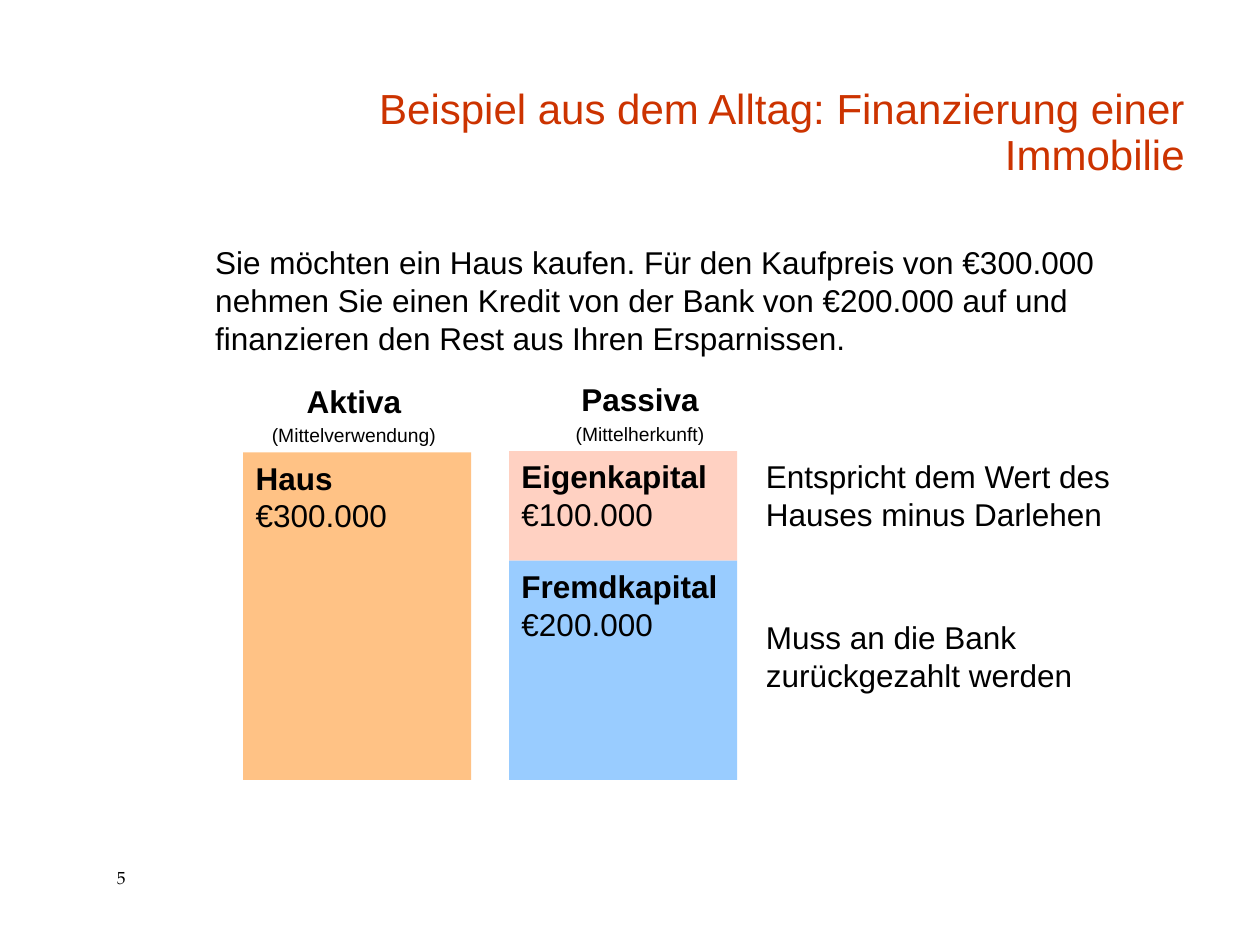
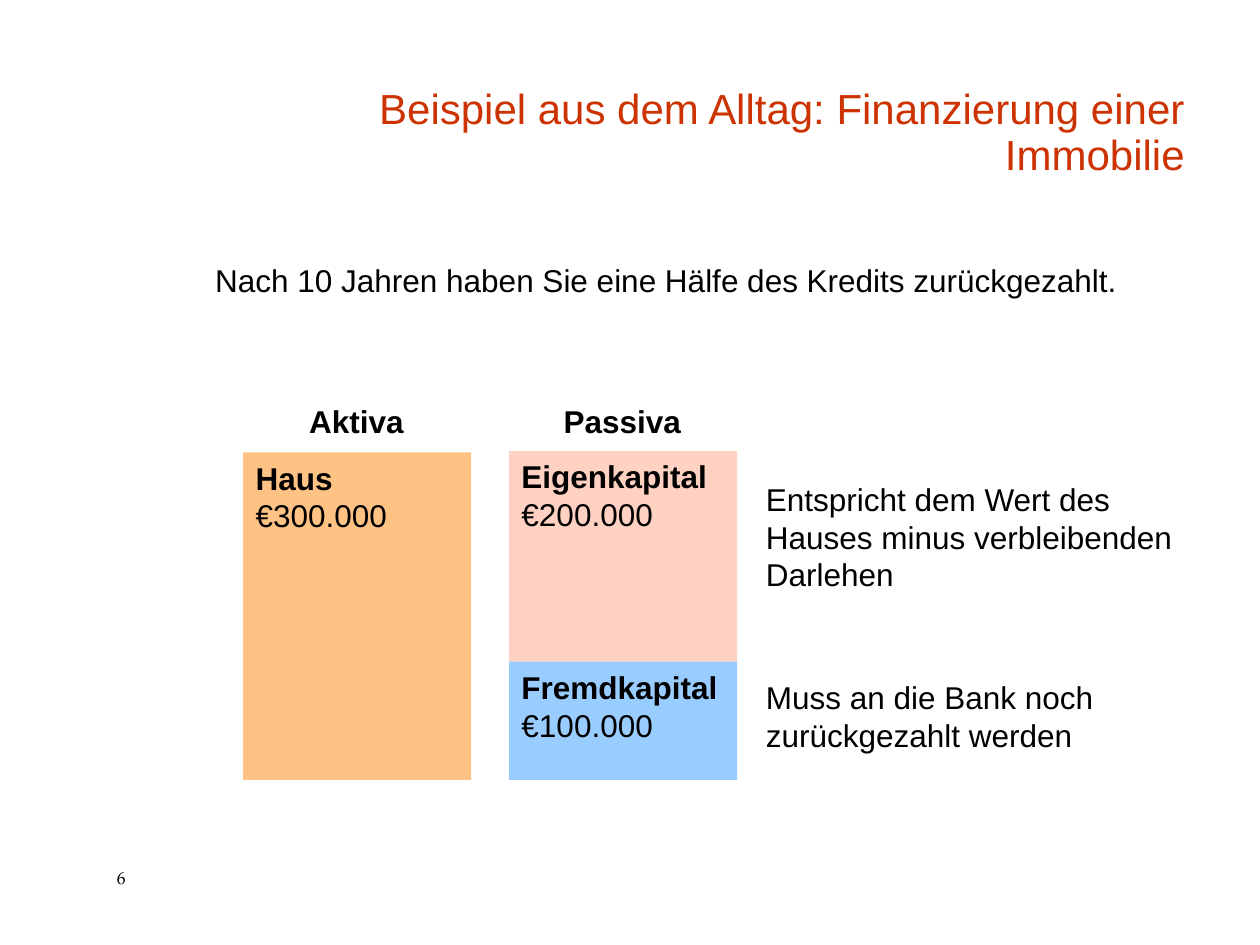
"""Build two slides that show how a house purchase is financed."""
from dataclasses import dataclass
from typing import NamedTuple

import pptx
import pptx.dml.color
import pptx.enum.shapes
import pptx.enum.text
import pptx.presentation
import pptx.shapes.autoshape
import pptx.slide
import pptx.util

RGBColor = pptx.dml.color.RGBColor
Align = pptx.enum.text.PP_ALIGN
Anchor = pptx.enum.text.MSO_ANCHOR

TITLE_RED = RGBColor(0xCC, 0x33, 0x00)
TEXT_BLACK = RGBColor(0x00, 0x00, 0x00)
ASSET_ORANGE = RGBColor(0xFF, 0xC2, 0x85)
EQUITY_PINK = RGBColor(0xFF, 0xD1, 0xC2)
DEBT_BLUE = RGBColor(0x99, 0xCC, 0xFF)

BODY_FONT = "Arial"
NUMBER_FONT = "TeX Gyre Pagella"

SLIDE_WIDTH = pptx.util.Inches(10)
SLIDE_HEIGHT = pptx.util.Inches(7.5)
COLUMNS, ROWS = 100, 75

TITLE = "Beispiel aus dem Alltag: Finanzierung einer Immobilie"
BAR_WIDTH = 18.1
ASSETS_LEFT, LIABILITIES_LEFT, REMARK_LEFT = 19.3, 40.4, 59.8
ASSETS_TOP, LIABILITIES_TOP, BARS_BOTTOM = 35.9, 35.8, 61.9
HEADING_WIDTH = 16


class Area(NamedTuple):
    """Place on the grid, in columns and rows."""
    left: float
    top: float
    width: float
    height: float


class Line(NamedTuple):
    """One paragraph and its look."""
    text: str
    size: float = 18
    bold: bool = False
    color: RGBColor = TEXT_BLACK
    font: str = BODY_FONT


@dataclass(frozen=True)
class Heading:
    """Caption centred above one side of the balance sheet."""
    name: str
    center: float
    top: float
    source: str = ""


@dataclass(frozen=True)
class Remark:
    """Explanation to the right of the liabilities."""
    text: str
    top: float


@dataclass(frozen=True)
class Balance:
    """Content of one balance sheet slide."""
    number: int
    situation: str
    situation_top: float
    headings: tuple[Heading, ...]
    equity: str
    debt: str
    equity_share: float
    remarks: tuple[Remark, ...]


BALANCES = (
    Balance(
        number=5,
        situation="Sie möchten ein Haus kaufen. Für den Kaufpreis von €300.000 "
                  "nehmen Sie einen Kredit von der Bank von €200.000 auf und "
                  "finanzieren den Rest aus Ihren Ersparnissen.",
        situation_top=18.8,
        headings=(Heading("Aktiva", 28.1, 29.8, "(Mittelverwendung)"),
                  Heading("Passiva", 50.8, 29.7, "(Mittelherkunft)")),
        equity="€100.000",
        debt="€200.000",
        equity_share=1 / 3,
        remarks=(Remark("Entspricht dem Wert des Hauses minus Darlehen", 35.8),
                 Remark("Muss an die Bank zurückgezahlt werden", 48.6)),
    ),
    Balance(
        number=6,
        situation="Nach 10 Jahren haben Sie eine Hälfe des Kredits zurückgezahlt.",
        situation_top=20.2,
        headings=(Heading("Aktiva", 28.3, 31.4),
                  Heading("Passiva", 49.4, 31.4)),
        equity="€200.000",
        debt="€100.000",
        equity_share=0.64,
        remarks=(Remark("Entspricht dem Wert des Hauses minus verbleibenden Darlehen", 37.6),
                 Remark("Muss an die Bank noch zurückgezahlt werden", 53.3)),
    ),
)


def place(area: Area) -> tuple[int, int, int, int]:
    """Turn grid columns and rows into lengths on the slide."""
    column, row = SLIDE_WIDTH / COLUMNS, SLIDE_HEIGHT / ROWS
    return (round(area.left * column), round(area.top * row),
            round(area.width * column), round(area.height * row))


def write(holder: pptx.shapes.autoshape.Shape, lines: tuple[Line, ...],
          align: Align = Align.LEFT, anchor: Anchor = Anchor.TOP,
          gap: float = 0, line_spacing: float = 1.0) -> None:
    """Fill a shape with paragraphs; the gap is a share of the text size."""
    frame = holder.text_frame
    frame.word_wrap = True
    frame.vertical_anchor = anchor
    for index, line in enumerate(lines):
        paragraph = frame.add_paragraph() if index else frame.paragraphs[0]
        paragraph.text = line.text
        paragraph.alignment = align
        paragraph.line_spacing = line_spacing
        if index and gap:
            paragraph.space_before = pptx.util.Pt(round(line.size * gap, 1))
        paragraph.font.name = line.font
        paragraph.font.size = pptx.util.Pt(line.size)
        paragraph.font.bold = line.bold
        paragraph.font.color.rgb = line.color


def add_text(slide: pptx.slide.Slide, area: Area, *lines: Line, **style) -> None:
    """Add a text box."""
    write(slide.shapes.add_textbox(*place(area)), lines, **style)


def add_bar(slide: pptx.slide.Slide, area: Area, fill: RGBColor,
            name: str, amount: str) -> None:
    """Add a coloured block with its name and amount."""
    bar = slide.shapes.add_shape(pptx.enum.shapes.MSO_SHAPE.RECTANGLE, *place(area))
    bar.shadow.inherit = False
    bar.fill.solid()
    bar.fill.fore_color.rgb = fill
    bar.line.fill.background()
    write(bar, (Line(name, bold=True), Line(amount)))


def add_heading(slide: pptx.slide.Slide, heading: Heading) -> None:
    """Add a side's name and, where given, what it stands for."""
    lines = [Line(heading.name, bold=True)]
    if heading.source:
        lines.append(Line(heading.source, size=11))
    area = Area(heading.center - HEADING_WIDTH / 2, heading.top, HEADING_WIDTH, 4.4)
    add_text(slide, area, *lines, align=Align.CENTER, gap=0.2)


def add_frame(slide: pptx.slide.Slide, number: int) -> None:
    """Add the page number and title that the slides share."""
    add_text(slide, Area(8.3, 68.3, 6.7, 2.7), Line(str(number), size=10, font=NUMBER_FONT))
    add_text(slide, Area(20.9, 4.2, 74.1, 10.5), Line(TITLE, size=24, color=TITLE_RED),
             align=Align.RIGHT, anchor=Anchor.BOTTOM, line_spacing=0.9)


def add_balance(deck: pptx.presentation.Presentation, balance: Balance) -> None:
    """Add one slide with its balance sheet."""
    slide = deck.slides.add_slide(deck.slide_layouts[6])
    add_frame(slide, balance.number)
    add_text(slide, Area(16.1, balance.situation_top, 75.8, 48.2), Line(balance.situation))

    liabilities_height = BARS_BOTTOM - LIABILITIES_TOP
    equity_height = liabilities_height * balance.equity_share
    add_bar(slide, Area(ASSETS_LEFT, ASSETS_TOP, BAR_WIDTH, BARS_BOTTOM - ASSETS_TOP),
            ASSET_ORANGE, "Haus", "€300.000")
    add_bar(slide, Area(LIABILITIES_LEFT, LIABILITIES_TOP, BAR_WIDTH, equity_height),
            EQUITY_PINK, "Eigenkapital", balance.equity)
    add_bar(slide, Area(LIABILITIES_LEFT, LIABILITIES_TOP + equity_height,
                        BAR_WIDTH, liabilities_height - equity_height),
            DEBT_BLUE, "Fremdkapital", balance.debt)

    for remark in balance.remarks:
        add_text(slide, Area(REMARK_LEFT, remark.top, 35.2, 7.7), Line(remark.text))
    for heading in balance.headings:
        add_heading(slide, heading)


def main() -> None:
    """Build and save the slides."""
    deck = pptx.Presentation()
    deck.slide_width, deck.slide_height = SLIDE_WIDTH, SLIDE_HEIGHT
    for balance in BALANCES:
        add_balance(deck, balance)
    deck.save("out.pptx")


if __name__ == "__main__":
    main()
